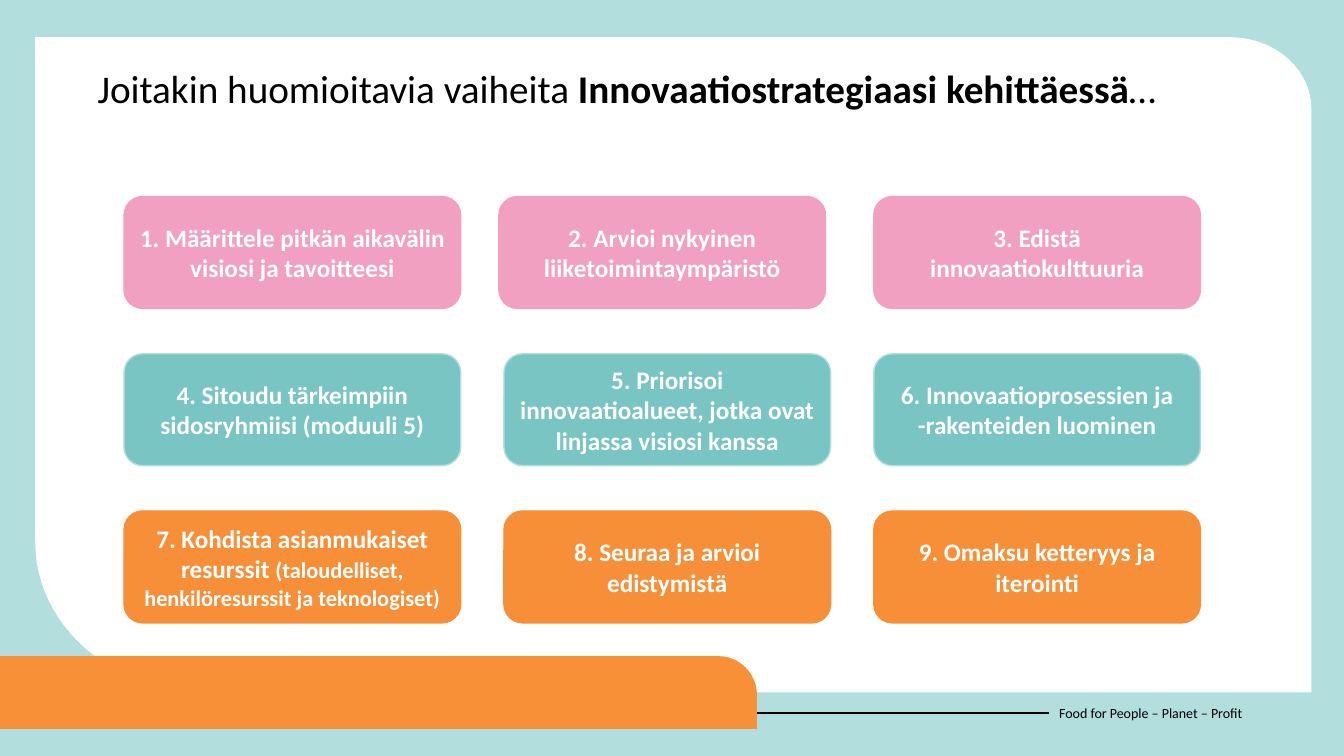
from dataclasses import dataclass
from math import cos, pi, sin

from lxml import etree
from pptx import Presentation
from pptx.dml.color import RGBColor
from pptx.enum.shapes import MSO_CONNECTOR, MSO_SHAPE
from pptx.enum.text import MSO_ANCHOR, PP_ALIGN
from pptx.oxml.ns import qn
from pptx.util import Pt

RECTANGLE, ROUNDED = MSO_SHAPE.RECTANGLE, MSO_SHAPE.ROUNDED_RECTANGLE
STRAIGHT = MSO_CONNECTOR.STRAIGHT
TOP, MIDDLE = MSO_ANCHOR.TOP, MSO_ANCHOR.MIDDLE
LEFT, CENTER = PP_ALIGN.LEFT, PP_ALIGN.CENTER
LEFT_SIDE = 1


@dataclass(frozen=True)
class Theme:
    font: str = "Calibri"
    mint: str = "B2DEDD"
    white: str = "FFFFFF"
    black: str = "000000"
    bar: str = "F79037"
    pink: str = "F1A0C2"
    teal: str = "79C5C3"
    orange: str = "F68F37"
    title: float = 28
    card: float = 18
    detail: float = 16
    footer: float = 10


THEME = Theme()

CARD_HEIGHT, FIRST_ROW, ROW_PITCH = 79.9, 140.4, 112.3
SIDE_LEFT, SIDE_WIDTH, CARD_WIDTH, LAST_LEFT = 88.6, 240.5, 233.3, 624.2

# Fill, outline, left edge of the middle card, texts
CARD_ROWS = [
    (THEME.pink, THEME.pink, 356.4, [
        "1. Määrittele pitkän aikavälin visiosi ja tavoitteesi",
        "2. Arvioi nykyinen liiketoimintaympäristö",
        "3. Edistä innovaatiokulttuuria"]),
    (THEME.teal, THEME.mint, 360, [
        "4. Sitoudu tärkeimpiin sidosryhmiisi (moduuli 5)",
        "5. Priorisoi innovaatioalueet, jotka ovat linjassa visiosi kanssa",
        "6. Innovaatioprosessien ja -rakenteiden luominen"]),
    (THEME.orange, THEME.orange, 360, [
        "7. Kohdista asianmukaiset resurssit |(taloudelliset, "
        "henkilöresurssit ja teknologiset)",
        "8. Seuraa ja arvioi edistymistä",
        "9. Omaksu ketteryys ja iterointi"]),
]


def color(value):
    return RGBColor.from_string(value)


def paint(shape, fill, outline=None):
    shape.shadow.inherit = False
    shape.fill.solid()
    shape.fill.fore_color.rgb = color(fill)
    if outline:
        shape.line.color.rgb = color(outline)
        shape.line.width = Pt(1)
    else:
        shape.line.fill.background()


def write(shape, spans, ink, anchor=TOP, align=LEFT, **para_format):
    """Fill one paragraph with spans of (text, size, bold)."""
    frame = shape.text_frame
    frame.word_wrap = True
    frame.vertical_anchor = anchor
    para = frame.paragraphs[0]
    para.alignment = align
    for name, value in para_format.items():
        setattr(para, name, value)
    for text, size, bold in spans:
        span = para.add_run()
        span.text = text
        span.font.color.rgb = color(ink)
        for name, value in {"name": THEME.font, "size": Pt(size), "bold": bold}.items():
            setattr(span.font, name, value)


def add_text(page, bounds, spans, **options):
    box = page.shapes.add_textbox(*map(Pt, bounds))
    write(box, spans, THEME.black, **options)
    return box


def add_box(page, kind, bounds, fill, outline=None):
    box = page.shapes.add_shape(kind, *map(Pt, bounds))
    paint(box, fill, outline)
    return box


def corner(center_x, center_y, radius_x, radius_y, start):
    """Points of a clockwise quarter ellipse from the angle start."""
    steps = 24
    angles = [start + pi / 2 * step / steps for step in range(steps + 1)]
    return [(center_x + radius_x * cos(a), center_y + radius_y * sin(a)) for a in angles]


def add_rounded_area(page, left, top, right, bottom, fill, top_right, bottom_left=None):
    """Area with elliptical corners at top right and, if given, bottom left."""
    radius_x, radius_y = top_right
    points = [(left, top), *corner(right - radius_x, top + radius_y, radius_x, radius_y, -pi / 2),
              (right, bottom)]
    if bottom_left:
        radius_x, radius_y = bottom_left
        points += corner(left + radius_x, bottom - radius_y, radius_x, radius_y, pi / 2)
    else:
        points.append((left, bottom))
    points = [(Pt(x), Pt(y)) for x, y in points]
    builder = page.shapes.build_freeform(*points[0])
    builder.add_line_segments(points[1:], close=True)
    paint(builder.convert_to_shape(), fill)


def add_footer(page):
    credit = add_text(page, (749.5, 494.6, 196.6, 28.8),
                      [("Food for People – Planet – Profit", THEME.footer, False)],
                      anchor=MIDDLE)
    rule = page.shapes.add_connector(STRAIGHT, 0, Pt(509), Pt(749.5), Pt(509))
    rule.end_connect(credit, LEFT_SIDE)
    rule.line.color.rgb = color(THEME.black)
    rule.line.width = Pt(1.5)
    etree.SubElement(rule.line._get_or_add_ln().getparent(), qn("a:effectLst"))
    add_rounded_area(page, 0, 468.7, 540.7, 520.6, THEME.bar, (27.4, 28))


def add_cards(page):
    for row, (fill, outline, middle_left, texts) in enumerate(CARD_ROWS):
        columns = [(SIDE_LEFT, SIDE_WIDTH), (middle_left, CARD_WIDTH), (LAST_LEFT, CARD_WIDTH)]
        for (left, width), text in zip(columns, texts):
            bounds = (left, FIRST_ROW + row * ROW_PITCH, width, CARD_HEIGHT)
            card = add_box(page, ROUNDED, bounds, fill, outline)
            spans = [(part, size, True)
                     for part, size in zip(text.split("|"), (THEME.card, THEME.detail))]
            write(card, spans, THEME.white, anchor=MIDDLE, align=CENTER)


def main():
    deck = Presentation()
    deck.slide_width, deck.slide_height = Pt(960), Pt(540)
    page = deck.slides.add_slide(deck.slide_layouts[6])
    add_box(page, RECTANGLE, (0, 0, 960, 540), THEME.mint)
    add_rounded_area(page, 25.2, 26.6, 936.7, 494.6, THEME.white, (58.3, 51.1), (122.4, 107.3))
    add_footer(page)
    add_text(page, (62.6, 46.1, 834.5, 63.4), [
        ("Joitakin huomioitavia vaiheita ", THEME.title, False),
        ("Innovaatiostrategiaasi kehittäessä", THEME.title, True),
        ("…", THEME.title, False),
    ], line_spacing=0.9, space_before=Pt(10))
    add_cards(page)
    deck.save("out.pptx")


if __name__ == "__main__":
    main()
